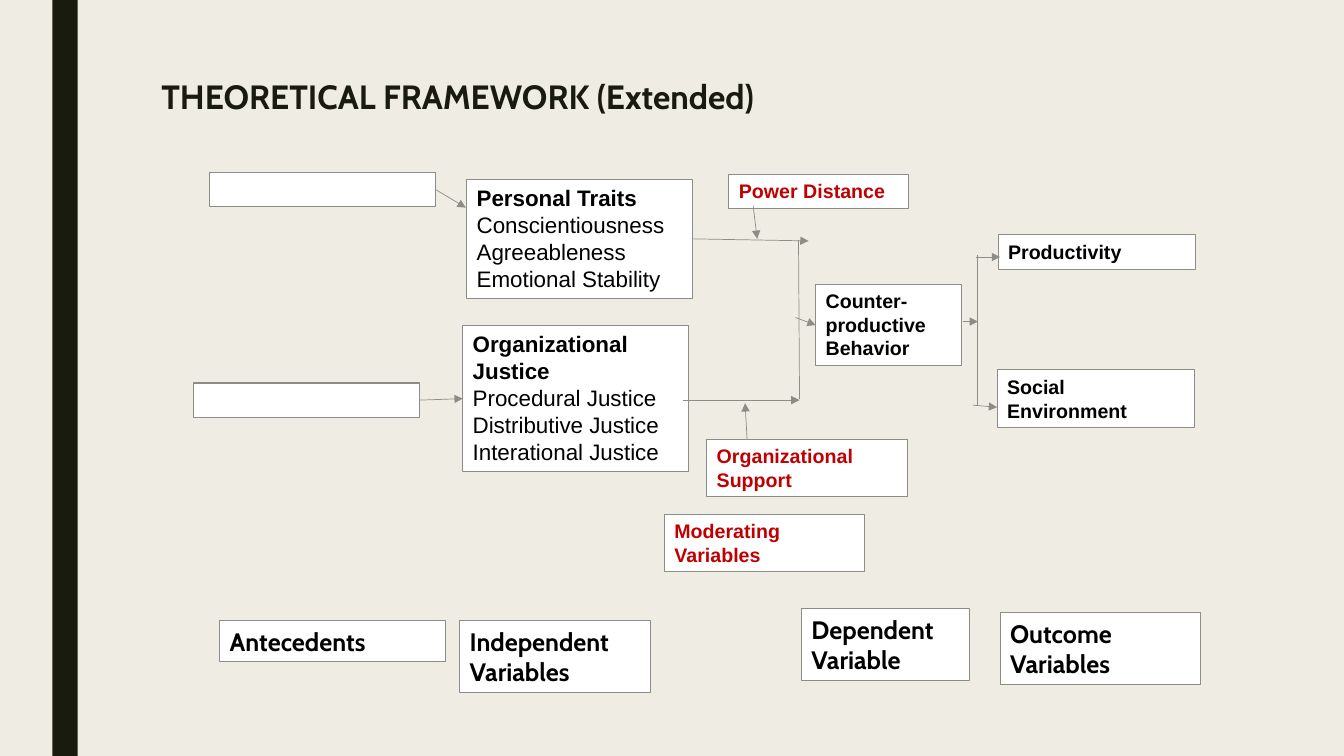
from lxml import etree
from pptx import Presentation
from pptx.dml.color import RGBColor
from pptx.enum.shapes import MSO_CONNECTOR, MSO_SHAPE
from pptx.enum.text import MSO_ANCHOR, PP_ALIGN
from pptx.oxml.ns import qn
from pptx.util import Emu, Pt

RECT = MSO_SHAPE.RECTANGLE
STRAIGHT = MSO_CONNECTOR.STRAIGHT
TOP, LEFT = MSO_ANCHOR.TOP, PP_ALIGN.LEFT
LEFT_SIDE, RIGHT_SIDE = 1, 3

CREAM, DARK, WHITE = "EFEDE3", "191B0E", "FFFFFF"
GREY, BLACK, RED = "8C8D86", "000000", "C00000"
BODY_FONT, HEAD_FONT = "Arial", "Cabin"


def px(value):
    """100 px to the inch."""
    return Emu(value * 9144)


def color(hex_text):
    return RGBColor.from_string(hex_text)


def add_run(paragraph, text, size, font, hue, bold):
    run = paragraph.add_run()
    run.text = text
    run.font.size = Pt(size)
    run.font.name = font
    run.font.bold = bold
    run.font.color.rgb = color(hue)


def add_rect(slide, box, fill):
    rect = slide.shapes.add_shape(RECT, *map(px, box))
    rect.shadow.inherit = False
    rect.fill.solid()
    rect.fill.fore_color.rgb = color(fill)
    rect.line.fill.background()
    return rect


def add_box(slide, box, lines=(), size=14, font=BODY_FONT, hue=BLACK):
    """White outlined box; its first line is bold, the others regular."""
    card = add_rect(slide, box, WHITE)
    card.line.color.rgb = color(GREY)
    card.line.width = Pt(0.75)
    frame = card.text_frame
    frame.word_wrap = True
    frame.vertical_anchor = TOP
    for index, line in enumerate(lines):
        paragraph = frame.add_paragraph() if index else frame.paragraphs[0]
        paragraph.alignment = LEFT
        add_run(paragraph, line, size, font, hue, index == 0)
    return card


def add_line(slide, start, end, arrow=True, source=None, target=None):
    """Line between two points, joined to source's right or target's left side."""
    line = slide.shapes.add_connector(STRAIGHT, *map(px, start + end))
    line.line.color.rgb = color(GREY)
    line.line.width = Pt(0.5)
    if arrow:
        etree.SubElement(line.line._get_or_add_ln(), qn("a:tailEnd"), type="triangle")
    etree.SubElement(line._element.spPr, qn("a:effectLst"))
    if source is not None:
        line.begin_connect(source, RIGHT_SIDE)
    if target is not None:
        line.end_connect(target, LEFT_SIDE)


def add_title(slide, box, text):
    title = slide.shapes.title
    title.left, title.top, title.width, title.height = map(px, box)
    frame = title.text_frame
    frame.word_wrap = True
    frame.vertical_anchor = TOP
    paragraph = frame.paragraphs[0]
    paragraph.alignment = LEFT
    paragraph.line_spacing = 0.89
    add_run(paragraph, text, 24, HEAD_FONT, DARK, True)


def add_causes(slide, left, top):
    """Antecedents leading to the independent variables."""
    trait_source = add_box(slide, (left + 16, top, 224, 34))
    justice_source = add_box(slide, (left, top + 209, 224, 34))
    traits = add_box(
        slide, (left + 271, top + 7, 224, 118),
        ["Personal Traits", "Conscientiousness", "Agreeableness",
         "Emotional Stability"], size=16)
    justice = add_box(
        slide, (left + 267, top + 152, 224, 145),
        ["Organizational Justice", "Procedural Justice",
         "Distributive Justice", "Interational Justice"], size=16)
    add_line(slide, (left + 240, top + 17), (left + 270, top + 35),
             source=trait_source)
    add_line(slide, (left + 224, top + 226), (left + 267, top + 225),
             source=justice_source, target=justice)
    return traits


def add_moderators(slide, left, top, traits):
    """Moderating variables acting on the paths to the dependent variable."""
    add_box(slide, (left + 64, top, 178, 34), ["Power Distance"], hue=RED)
    add_box(slide, (left + 42, top + 263, 199, 57),
            ["Organizational Support"], hue=RED)
    add_box(slide, (left, top + 337, 198, 57), ["Moderating Variables"], hue=RED)
    # Paths from the independent variables and the bar gathering them
    add_line(slide, (left + 28, top + 64), (left + 143, top + 66), source=traits)
    add_line(slide, (left + 18, top + 224), (left + 134, top + 224))
    add_line(slide, (left + 134, top + 223), (left + 133, top + 65), arrow=False)
    # Moderating arrows
    add_line(slide, (left + 88, top + 31), (left + 92, top + 64))
    add_line(slide, (left + 82, top + 263), (left + 80, top + 227))


def add_effects(slide, left, top):
    """Dependent variable leading to the outcomes."""
    behavior = add_box(slide, (left + 20, top + 49, 145, 81),
                       ["Counter-productive Behavior"])
    add_line(slide, (left, top + 82), (left + 20, top + 90), target=behavior)
    add_line(slide, (left + 166, top + 86), (left + 181, top + 86))
    # Fork to the outcomes
    add_line(slide, (left + 180, top + 20), (left + 180, top + 170), arrow=False)
    add_box(slide, (left + 201, top, 196, 34), ["Productivity"])
    add_box(slide, (left + 200, top + 134, 196, 57), ["Social Environment"])
    add_line(slide, (left + 179, top + 22), (left + 203, top + 22))
    add_line(slide, (left + 176, top + 169), (left + 200, top + 171))


def add_roles(slide, left, top):
    """Row naming the role of each column."""
    roles = [
        (0, 12, 224, 40, "Antecedents"),
        (238, 12, 189, 71, "Independent Variables"),
        (577, 0, 167, 71, "Dependent Variable"),
        (774, 4, 199, 71, "Outcome Variables"),
    ]
    for dx, dy, width, height, role in roles:
        add_box(slide, (left + dx, top + dy, width, height), [role],
                size=18, font=HEAD_FONT)


def main():
    deck = Presentation()
    deck.slide_width, deck.slide_height = px(1333), px(750)
    slide = deck.slides.add_slide(deck.slide_layouts.get_by_name("Title Only"))
    slide.background.fill.solid()
    slide.background.fill.fore_color.rgb = color(CREAM)

    add_rect(slide, (52, 0, 25, 750), DARK)
    add_title(slide, (150, 75, 1050, 162), "THEORETICAL FRAMEWORK (Extended)")
    traits = add_causes(slide, 192, 171)
    add_moderators(slide, 659, 173, traits)
    add_effects(slide, 789, 233)
    add_roles(slide, 218, 604)
    deck.save("out.pptx")


if __name__ == "__main__":
    main()
